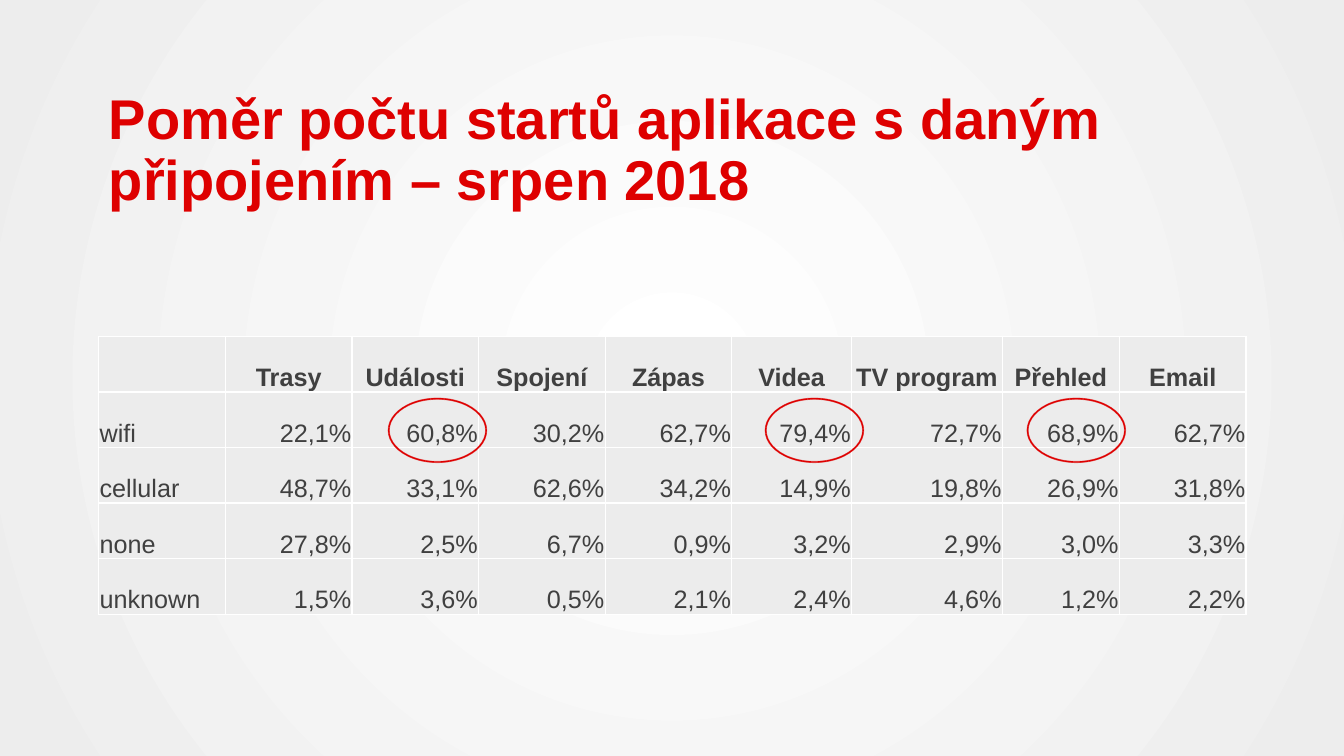
from dataclasses import dataclass

from lxml import etree
from pptx import Presentation
from pptx.dml.color import RGBColor
from pptx.enum.shapes import MSO_SHAPE
from pptx.enum.text import MSO_ANCHOR, MSO_AUTO_SIZE, PP_ALIGN
from pptx.oxml import parse_xml
from pptx.oxml.ns import nsdecls, qn
from pptx.util import Cm, Pt

DONUT = MSO_SHAPE.DONUT
TOP, BOTTOM = MSO_ANCHOR.TOP, MSO_ANCHOR.BOTTOM
LEFT, CENTER, RIGHT = PP_ALIGN.LEFT, PP_ALIGN.CENTER, PP_ALIGN.RIGHT
NO_FIT = MSO_AUTO_SIZE.NONE


@dataclass(frozen=True)
class Theme:
    red: str = "DE0000"
    text: str = "404040"
    cell: str = "ECECEC"
    border: str = "FFFFFF"
    centre: str = "FFFFFF"
    edge: str = "EDEDED"
    font: str = "Arial"
    title_size: int = 40
    table_size: int = 18


THEME = Theme()

TITLE = "Poměr počtu startů aplikace s daným připojením – srpen 2018"
ROWS = [
    ["", "Trasy", "Události", "Spojení", "Zápas", "Videa", "TV program", "Přehled", "Email"],
    ["wifi", "22,1%", "60,8%", "30,2%", "62,7%", "79,4%", "72,7%", "68,9%", "62,7%"],
    ["cellular", "48,7%", "33,1%", "62,6%", "34,2%", "14,9%", "19,8%", "26,9%", "31,8%"],
    ["none", "27,8%", "2,5%", "6,7%", "0,9%", "3,2%", "2,9%", "3,0%", "3,3%"],
    ["unknown", "1,5%", "3,6%", "0,5%", "2,1%", "2,4%", "4,6%", "1,2%", "2,2%"],
]
COL_WIDTHS = [3.19] * 5 + [3.02, 3.8, 2.95, 3.19]
ROW_HEIGHT = 1.4
# Ringed column: how far the ring reaches past the column's right edge
RINGS = {5: 0.31, 7: 0.16, 2: 0.21}
RING_SIZE = (2.49, 1.63)
RING_DROP = 0.15


def set_font(font, size, color, bold):
    values = {"name": THEME.font, "size": Pt(size), "bold": bold}
    for name, value in values.items():
        setattr(font, name, value)
    font.color.rgb = RGBColor.from_string(color)


def add_background(master):
    fill = master.background.fill
    fill.gradient()
    for stop, color in zip(fill.gradient_stops, (THEME.centre, THEME.edge)):
        stop.color.rgb = RGBColor.from_string(color)
    grad = master.element.find(".//" + qn("a:gradFill"))
    grad.replace(grad.find(qn("a:lin")), parse_xml(
        f'<a:path {nsdecls("a")} path="circle">'
        '<a:fillToRect l="50000" t="50000" r="50000" b="50000"/></a:path>'))


def add_title(slide, left, top, width, height):
    sp = slide.shapes.title
    box = {"left": left, "top": top, "width": width, "height": height}
    for name, value in box.items():
        setattr(sp, name, Cm(value))
    tf = sp.text_frame
    frame = {"word_wrap": True, "auto_size": NO_FIT, "vertical_anchor": TOP}
    for name, value in frame.items():
        setattr(tf, name, value)
    p = tf.paragraphs[0]
    p.alignment, p.line_spacing = LEFT, 0.9
    r = p.add_run()
    r.text = TITLE
    set_font(r.font, THEME.title_size, THEME.red, True)


def format_cell(cell):
    values = {"vertical_anchor": BOTTOM, "margin_left": Cm(0.02), "margin_right": Cm(0.02),
              "margin_top": Cm(0.02), "margin_bottom": 0}
    for name, value in values.items():
        setattr(cell, name, value)
    tc_pr = cell._tc.get_or_add_tcPr()
    for side in ("lnL", "lnR", "lnT", "lnB"):
        tc_pr.append(parse_xml(
            f'<a:{side} {nsdecls("a")} w="{Pt(1)}"><a:solidFill>'
            f'<a:srgbClr val="{THEME.border}"/></a:solidFill></a:{side}>'))
    cell.fill.solid()
    cell.fill.fore_color.rgb = RGBColor.from_string(THEME.cell)


def add_ratio_table(slide, left, top):
    width, height = sum(COL_WIDTHS), ROW_HEIGHT * len(ROWS)
    table = slide.shapes.add_table(len(ROWS), len(COL_WIDTHS), Cm(left), Cm(top),
                                   Cm(width), Cm(height)).table
    table.first_row = table.horz_banding = False
    for column, col_width in zip(table.columns, COL_WIDTHS):
        column.width = Cm(col_width)
    for i, row in enumerate(ROWS):
        table.rows[i].height = Cm(ROW_HEIGHT)
        for j, text in enumerate(row):
            cell = table.cell(i, j)
            format_cell(cell)
            if text:
                p = cell.text_frame.paragraphs[0]
                p.alignment = CENTER if i == 0 else RIGHT if j else LEFT
                r = p.add_run()
                r.text = text
                set_font(r.font, THEME.table_size, THEME.text, i == 0)


def add_rings(slide, left, top):
    ring_width, ring_height = RING_SIZE
    for column, overhang in RINGS.items():
        right = left + sum(COL_WIDTHS[:column + 1]) + overhang
        sp = slide.shapes.add_shape(DONUT, Cm(right - ring_width),
                                    Cm(top + ROW_HEIGHT + RING_DROP),
                                    Cm(ring_width), Cm(ring_height))
        sp.adjustments[0] = 0.021
        sp.shadow.inherit = False
        for fill in (sp.fill, sp.line.fill):
            fill.solid()
            fill.fore_color.rgb = RGBColor.from_string(THEME.red)
        sp.line.width = Pt(0.5)
        # Half-transparent outline
        color = sp.line._ln.find(".//" + qn("a:srgbClr"))
        etree.SubElement(color, qn("a:alpha"), val="48000")


def main():
    prs = Presentation()
    prs.slide_width, prs.slide_height = Cm(33.87), Cm(19.05)
    add_background(prs.slide_master)
    slide = prs.slides.add_slide(prs.slide_layouts[5])
    left, table_top = 2.49, 8.48
    add_title(slide, left, 2.18, 28.9, 1.96)
    add_ratio_table(slide, left, table_top)
    add_rings(slide, left, table_top)
    prs.save("out.pptx")


if __name__ == "__main__":
    main()
